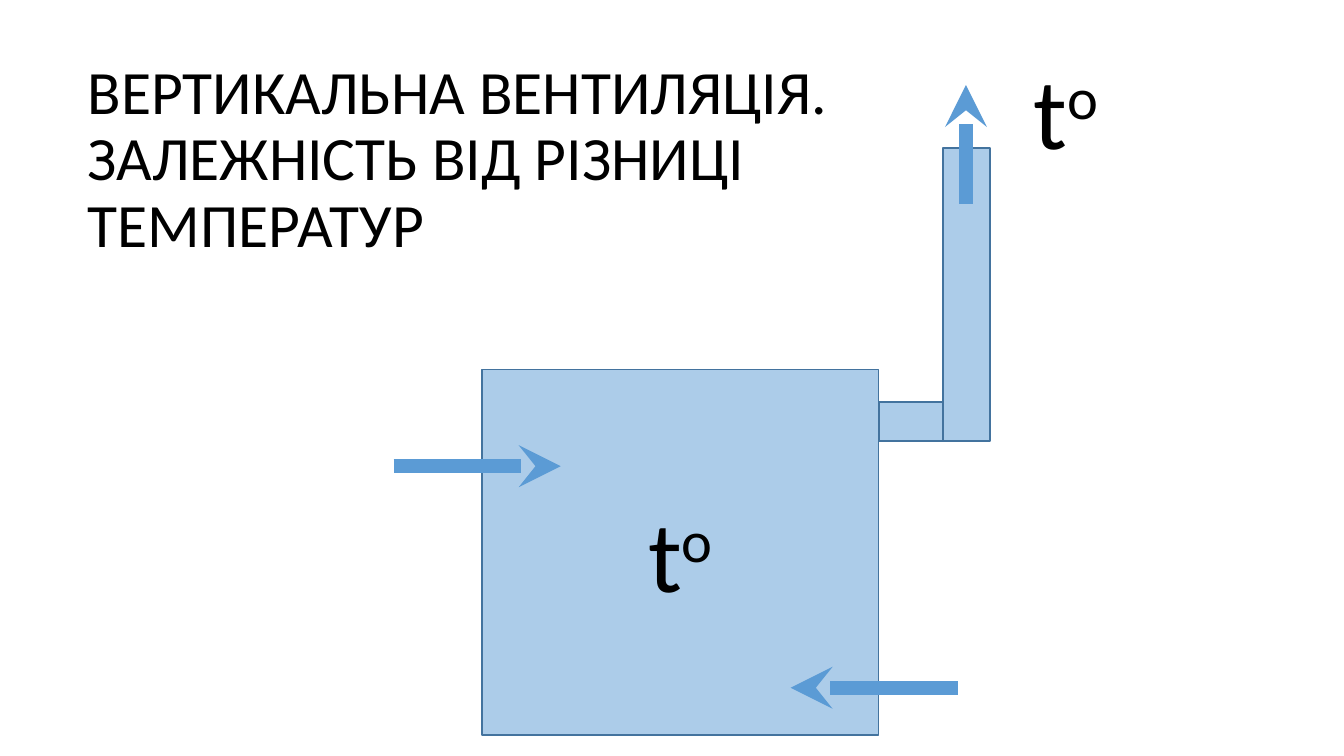
from lxml.etree import SubElement
from pptx import Presentation
from pptx.dml.color import RGBColor
from pptx.enum.shapes import MSO_CONNECTOR, MSO_SHAPE
from pptx.enum.text import MSO_ANCHOR, MSO_AUTO_SIZE, PP_ALIGN
from pptx.oxml.ns import qn
from pptx.util import Pt

SCALE = 9525
BLUE = RGBColor(0x5B, 0x9B, 0xD5)
EDGE = RGBColor(0x43, 0x73, 0x9E)
BLACK = RGBColor(0, 0, 0)
FONT = "Calibri"


def px(*sizes):
    """Turn pixel lengths into EMU."""
    return [size * SCALE for size in sizes]


def style(para, size, align):
    """Set the font and alignment of a paragraph."""
    para.alignment = align
    para.font.name = FONT
    para.font.size = Pt(size)
    para.font.color.rgb = BLACK


def add_title(slide, box, lines):
    """Place the heading in its box."""
    title = slide.shapes.title
    title.left, title.top, title.width, title.height = px(*box)
    frame = title.text_frame
    frame.text = "\n".join(lines)
    frame.word_wrap = True
    frame.auto_size = MSO_AUTO_SIZE.NONE
    frame.vertical_anchor = MSO_ANCHOR.MIDDLE
    for para in frame.paragraphs:
        style(para, 44, PP_ALIGN.LEFT)
        para.line_spacing = 0.9


def add_block(slide, x, y, width, height):
    """Draw one half-transparent part of the room or duct."""
    block = slide.shapes.add_shape(MSO_SHAPE.RECTANGLE, *px(x, y, width, height))
    block.shadow.inherit = False
    block.fill.solid()
    block.fill.fore_color.rgb = BLUE
    color = block.fill._xPr.find(qn("a:solidFill"))[0]
    SubElement(color, qn("a:alpha"), val="50000")
    block.line.color.rgb = EDGE
    block.line.width = Pt(1)


def add_flow(slide, x, y, run, rise):
    """Draw an air flow arrow from a point."""
    flow = slide.shapes.add_connector(
        MSO_CONNECTOR.STRAIGHT, *px(x, y, x + run, y + rise))
    flow.line.color.rgb = BLUE
    flow.line.width = Pt(10)
    SubElement(flow.line._get_or_add_ln(), qn("a:tailEnd"), type="stealth")
    SubElement(flow._element.spPr, qn("a:effectLst"))


def add_degree(slide, x, y):
    """Write the temperature sign with a raised o."""
    label = slide.shapes.add_textbox(*px(x, y, 144, 52))
    frame = label.text_frame
    frame.word_wrap = True
    frame.vertical_anchor = MSO_ANCHOR.MIDDLE
    para = frame.paragraphs[0]
    style(para, 72, PP_ALIGN.CENTER)
    para.add_run().text = "t"
    power = para.add_run()
    power.text = "o"
    power._r.get_or_add_rPr().set("baseline", "30000")


def add_scheme(slide, box):
    """Draw the room, duct, air flows and signs within a box."""
    left, top, width, height = box
    room, neck, pipe = 378, 61, 45
    room_x = left + 84
    room_y = top + 274
    neck_x = room_x + room
    pipe_x = neck_x + neck
    neck_y = room_y + 31
    pipe_y = top + 63
    base = neck_y + 37
    add_block(slide, room_x, room_y, room, top + height - room_y)
    add_block(slide, neck_x, neck_y, neck, base - neck_y)
    add_block(slide, pipe_x, pipe_y, pipe, base - pipe_y)
    add_flow(slide, left, room_y + 92, 159, 0)
    add_flow(slide, neck_x + 75, room_y + 303, -159, 0)
    add_flow(slide, pipe_x + pipe // 2, pipe_y + 53, 0, -113)
    add_degree(slide, room_x + (room - 144) // 2, room_y + 148)
    add_degree(slide, left + width - 144, top)


def main():
    """Build and save the slide."""
    deck = Presentation()
    deck.slide_width, deck.slide_height = px(1280, 720)
    slide = deck.slides.add_slide(deck.slide_layouts[5])
    add_title(slide, (74, 127, 880, 52), (
        "ВЕРТИКАЛЬНА ВЕНТИЛЯЦІЯ.",
        "ЗАЛЕЖНІСТЬ ВІД РІЗНИЦІ ТЕМПЕРАТУР"))
    add_scheme(slide, (375, 78, 712, 622))
    deck.save("out.pptx")


if __name__ == "__main__":
    main()
